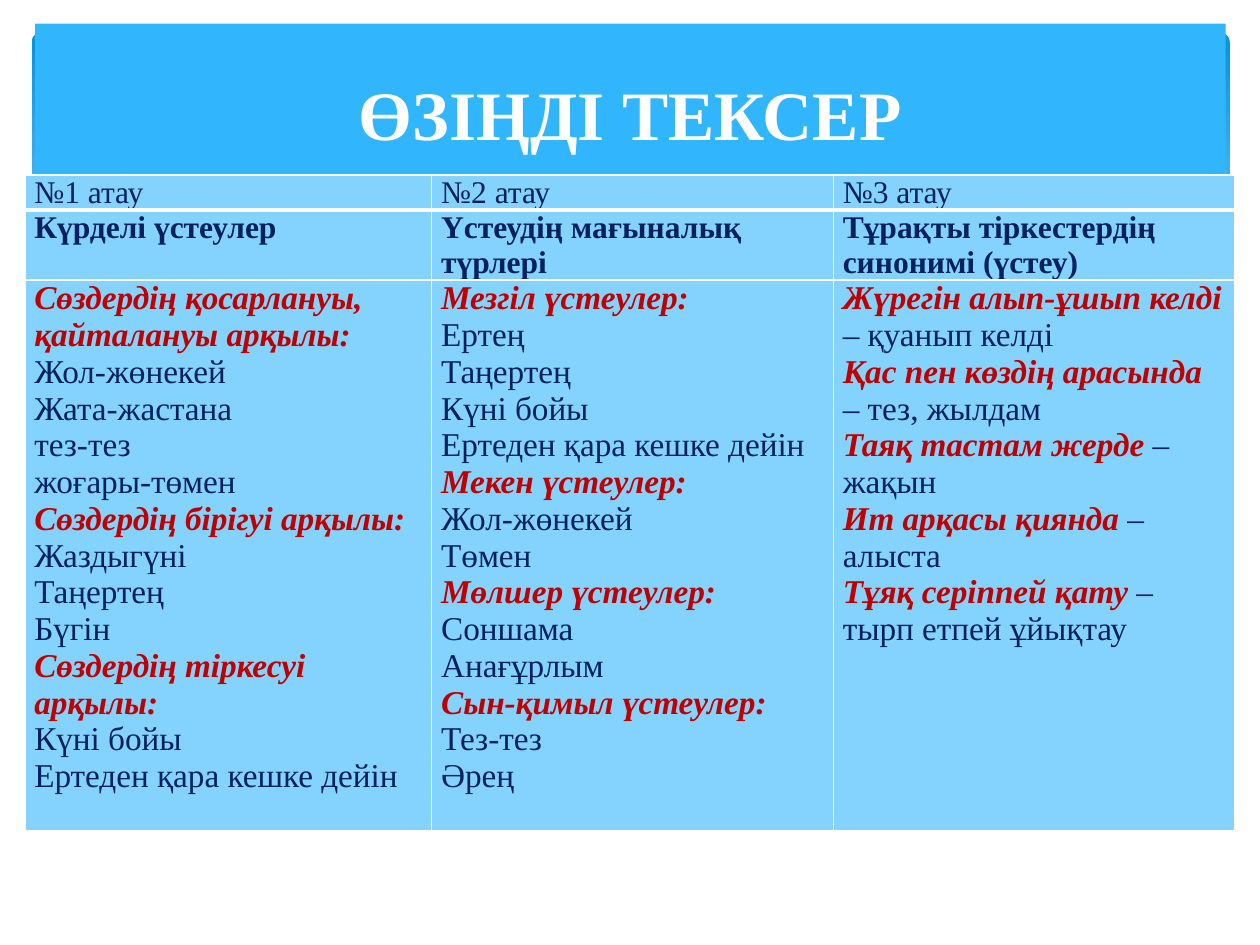
from lxml import etree
from pptx import Presentation
from pptx.dml.color import RGBColor
from pptx.enum.shapes import MSO_SHAPE
from pptx.enum.text import MSO_ANCHOR, PP_ALIGN
from pptx.oxml.ns import qn
from pptx.util import Pt

RECT, ROUND_RECT = MSO_SHAPE.RECTANGLE, MSO_SHAPE.ROUNDED_RECTANGLE
MIDDLE, CENTER = MSO_ANCHOR.MIDDLE, PP_ALIGN.CENTER
JUSTIFY, LEFT = PP_ALIGN.JUSTIFY, PP_ALIGN.LEFT
FONT = "Times New Roman"
COLORS = {"title": "31B6FD", "deep": "0293E0", "cell": "83D3FE",
          "white": "FFFFFF", "navy": "002060", "red": "C00000"}


def format_run(r, size, color, bold=False, italic=False):
    r.font.name = FONT
    r.font.size = Pt(size)
    r.font.bold = bold
    r.font.italic = italic
    r.font.color.rgb = RGBColor.from_string(COLORS[color])


def add_border(cell, side, width):
    ln = etree.SubElement(cell._tc.get_or_add_tcPr(), qn(f"a:{side}"), w=str(Pt(width)))
    fill = etree.SubElement(ln, qn("a:solidFill"))
    etree.SubElement(fill, qn("a:srgbClr"), val=COLORS["white"])


prs = Presentation()
prs.slide_width, prs.slide_height = Pt(720), Pt(540)
s = prs.slides.add_slide(prs.slide_layouts[6])

panel = s.shapes.add_shape(ROUND_RECT, Pt(18), Pt(18), Pt(684.7), Pt(194.4))
panel.adjustments[0] = 0.034
panel.shadow.inherit = False
panel.line.fill.background()
panel.fill.gradient()
panel.fill.gradient_angle = 270
for stop, color, position in zip(panel.fill.gradient_stops, ("deep", "cell"), (0, 0.9)):
    stop.color.rgb = RGBColor.from_string(COLORS[color])
    stop.position = position

title = s.shapes.add_shape(RECT, Pt(20), Pt(13.5), Pt(680.4), Pt(95.8))
title.shadow.inherit = False
title.line.fill.background()
title.fill.solid()
title.fill.fore_color.rgb = RGBColor.from_string(COLORS["title"])
tf = title.text_frame
tf.vertical_anchor = MIDDLE
tf.margin_top, tf.margin_bottom = Pt(9), Pt(3)
tf.text = "ӨЗІҢДІ ТЕКСЕР"
p = tf.paragraphs[0]
p.alignment = CENTER
format_run(p.runs[0], 39.6, "white", bold=True)

headers = ["№1 атау", "№2 атау", "№3 атау"]
topics = ["Күрделі үстеулер", "Үстеудің мағыналық түрлері",
          "Тұрақты тіркестердің синонимі (үстеу)"]
groups = [
    [("Сөздердің қосарлануы, қайталануы арқылы:",
      ["Жол-жөнекей", "Жата-жастана", "тез-тез", "жоғары-төмен"]),
     ("Сөздердің бірігуі арқылы:", ["Жаздыгүні", "Таңертең", "Бүгін"]),
     ("Сөздердің тіркесуі арқылы:", ["Күні бойы", "Ертеден қара кешке дейін"])],
    [("Мезгіл үстеулер:",
      ["Ертең", "Таңертең", "Күні бойы", "Ертеден қара кешке дейін"]),
     ("Мекен үстеулер:", ["Жол-жөнекей", "Төмен"]),
     ("Мөлшер үстеулер:", ["Соншама", "Анағұрлым"]),
     ("Сын-қимыл үстеулер:", ["Тез-тез", "Әрең"])],
]
idioms = [("Жүрегін алып-ұшып келді ", "– қуанып келді"),
          ("Қас пен көздің арасында ", "– тез, жылдам"),
          ("Таяқ тастам жерде ", "– жақын"),
          ("Ит арқасы қиянда ", "– алыста"),
          ("Тұяқ серіппей қату ", "– тырп етпей ұйықтау")]

RED = (19, "red", True, True)
NAVY = (19, "navy")
details = []
for column in groups:
    lines = []
    for heading, words in column:
        lines.append([(heading, RED)])
        lines += [[(word, NAVY)] for word in words]
    details.append(lines)
details.append([[(idiom, RED), (meaning, NAVY)] for idiom, meaning in idioms])

rows = [[[[(text, (18, "navy"))]] for text in headers],
        [[[(text, (18, "navy", True))]] for text in topics],
        details]
widths, heights = [232.5, 229.5, 229.5], [20, 40, 314.5]

table = s.shapes.add_table(3, 3, Pt(14.2), Pt(100.1), Pt(sum(widths)), Pt(sum(heights))).table
table.horz_banding = False
for column, width in zip(table.columns, widths):
    column.width = Pt(width)
for i, (height, cells) in enumerate(zip(heights, rows)):
    table.rows[i].height = Pt(height)
    for j, lines in enumerate(cells):
        cell = table.cell(i, j)
        cell.margin_left = cell.margin_right = Pt(5.4)
        cell.margin_top = cell.margin_bottom = 0
        for side in ("lnL", "lnR", "lnT", "lnB"):
            thick = (i, side) in ((0, "lnB"), (1, "lnT"))
            add_border(cell, side, 3 if thick else 1)
        cell.fill.solid()
        cell.fill.fore_color.rgb = RGBColor.from_string(COLORS["cell"])
        tf = cell.text_frame
        for k, line in enumerate(lines):
            p = tf.add_paragraph() if k else tf.paragraphs[0]
            p.alignment = JUSTIFY if i == 0 else LEFT
            for text, style in line:
                r = p.add_run()
                r.text = text
                format_run(r, *style)

prs.save("out.pptx")
